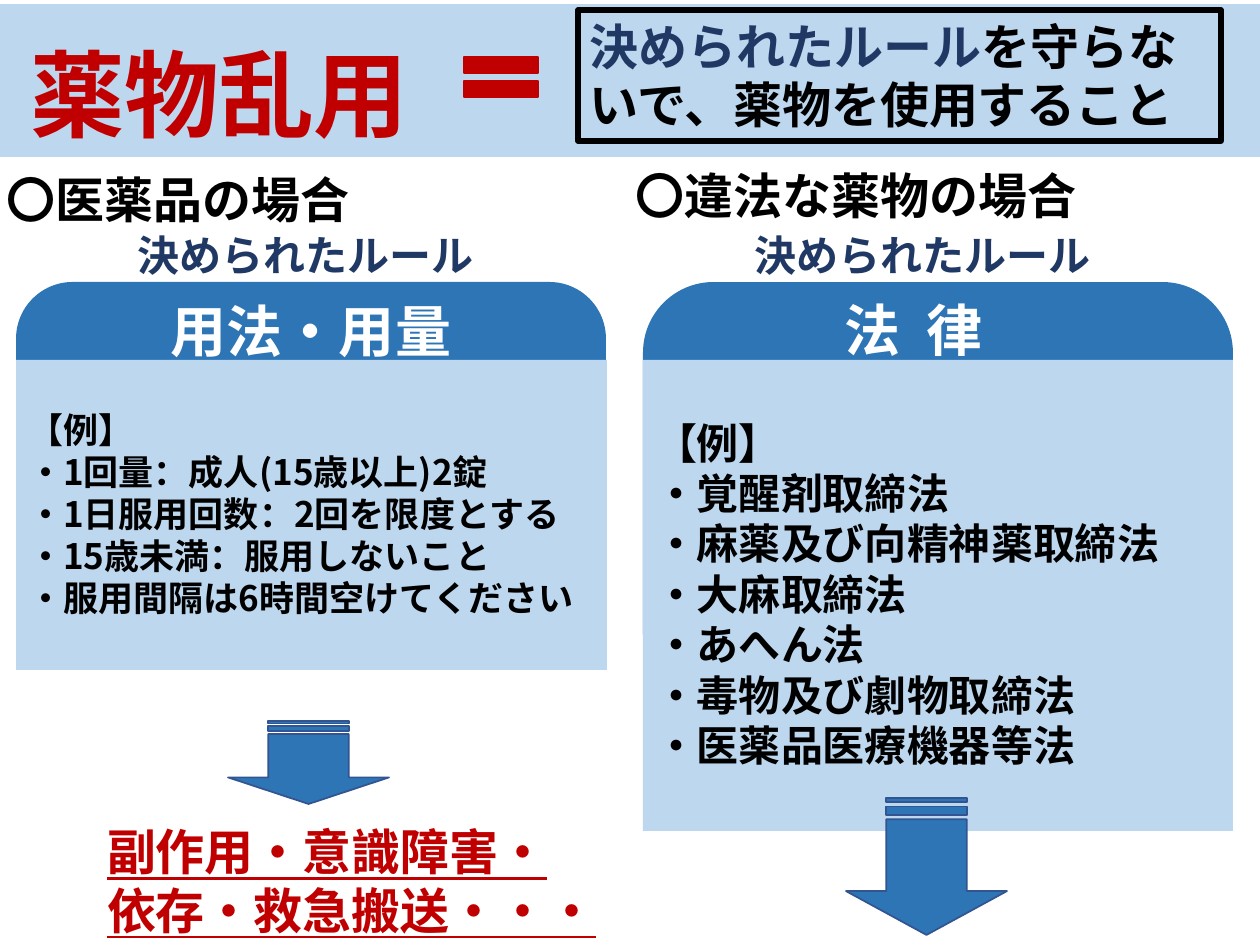
from dataclasses import dataclass

from lxml import etree
from pptx import Presentation
from pptx.dml.color import RGBColor
from pptx.enum.shapes import MSO_SHAPE
from pptx.enum.text import MSO_ANCHOR, MSO_AUTO_SIZE, PP_ALIGN
from pptx.oxml.ns import qn
from pptx.util import Emu, Pt

RECT = MSO_SHAPE.RECTANGLE
ROUND = MSO_SHAPE.ROUNDED_RECTANGLE
EQUAL = MSO_SHAPE.MATH_EQUAL
ARROW = MSO_SHAPE.STRIPED_RIGHT_ARROW
TOP, BOTTOM = MSO_ANCHOR.TOP, MSO_ANCHOR.BOTTOM
LEFT = PP_ALIGN.LEFT
NO_FIT = MSO_AUTO_SIZE.NONE
PX = 914400 // 126  # EMU per px
TWO_CONTENT = 3

Box = tuple[int, int, int, int]


@dataclass(frozen=True)
class Theme:
    font: str = "Noto Sans CJK JP"
    black: str = "000000"
    white: str = "FFFFFF"
    red: str = "C00000"
    navy: str = "203864"
    blue: str = "2E75B6"
    pale: str = "BDD7EE"
    edge: str = "325491"
    title: int = 54
    header: int = 32
    heading: int = 28
    label: int = 24


T = Theme()


@dataclass(frozen=True)
class Panel:
    heading: str
    heading_box: Box
    rule_box: Box
    card: Box
    header: str
    header_box: Box
    header_gap: int  # hundredths of a point between characters
    body_box: Box
    body_top: int
    body_size: int
    items: tuple[str, ...]
    arrow: Box


PANELS = (
    Panel("〇医薬品の場合", (-5, 163, 494, 72), (126, 224, 365, 63),
          (16, 282, 590, 340), "用法・用量", (159, 290, 306, 81), 0,
          (16, 360, 591, 310), 48, 20,
          ("【例】", "・1回量：成人(15歳以上)2錠", "・1日服用回数：2回を限度とする",
           "・15歳未満：服用しないこと", "・服用間隔は6時間空けてください"),
          (267, 682, 83, 161)),
    Panel("〇違法な薬物の場合", (624, 160, 494, 72), (743, 224, 365, 63),
          (643, 282, 590, 423), "法 律", (833, 289, 188, 81), 360,
          (643, 360, 590, 471), 57, 24,
          ("【例】", "・覚醒剤取締法", "・麻薬及び向精神薬取締法", "・大麻取締法",
           "・あへん法", "・毒物及び劇物取締法", "・医薬品医療機器等法"),
          (858, 786, 137, 161)),
)


def emu(box: Box) -> list[Emu]:
    return [Emu(v * PX) for v in box]


def place(sp, box: Box) -> None:
    sp.left, sp.top, sp.width, sp.height = emu(box)


def add_run(p, text: str, *, size: int, color: str = T.black,
            underline: bool = False, gap: int = 0) -> None:
    r = p.add_run()
    r.text = text
    f = r.font
    f.size, f.bold = Pt(size), True
    if underline:
        f.underline = True
    f.color.rgb = RGBColor.from_string(color)
    f.name = T.font
    rpr = r._r.get_or_add_rPr()
    etree.SubElement(rpr, qn("a:ea")).set("typeface", T.font)
    if gap:
        rpr.set("spc", str(gap))


def write(sp, *lines: str, anchor=TOP, left: int = 12, right: int = 12,
          top: int = 6, spacing: float = 1.0, **fmt) -> None:
    """Set one paragraph per line, all in the same format."""
    tf = sp.text_frame
    tf.word_wrap, tf.auto_size, tf.vertical_anchor = True, NO_FIT, anchor
    tf.margin_left, tf.margin_right, tf.margin_top, tf.margin_bottom = emu(
        (left, right, top, 6))
    for i, line in enumerate(lines):
        p = tf.add_paragraph() if i else tf.paragraphs[0]
        p.alignment, p.line_spacing = LEFT, spacing
        p.space_before = p.space_after = Pt(0)
        add_run(p, line, **fmt)


def add_text(slide, box: Box, *lines: str, **fmt) -> None:
    write(slide.shapes.add_textbox(*emu(box)), *lines, **fmt)


def paint(sp, color: str) -> None:
    sp.fill.solid()
    sp.fill.fore_color.rgb = RGBColor.from_string(color)


def add_shape(slide, kind, box: Box, *, fill: str = "", line: str = "",
              weight: int = 1, adj: tuple[float, ...] = (), turn: int = 0):
    sp = slide.shapes.add_shape(kind, *emu(box))
    sp.shadow.inherit = False
    sp.rotation = turn
    for i, value in enumerate(adj):
        sp.adjustments[i] = value
    if fill:
        paint(sp, fill)
    else:
        sp.fill.background()
    if line:
        sp.line.color.rgb = RGBColor.from_string(line)
        sp.line.width = Pt(weight)
    else:
        sp.line.fill.background()
    return sp


def fill_body(slide, sp, panel: Panel) -> None:
    slide.shapes._spTree.append(sp._element)  # bring in front of the card
    place(sp, panel.body_box)
    paint(sp, T.pale)
    write(sp, *panel.items, size=panel.body_size, top=panel.body_top, right=0)
    for p in sp.text_frame.paragraphs:
        ppr = p._p.get_or_add_pPr()
        ppr.set("marL", "0")
        ppr.set("indent", "0")
        etree.SubElement(ppr, qn("a:buNone"))


def draw_panel(slide, body, panel: Panel) -> None:
    add_text(slide, panel.heading_box, panel.heading, size=T.heading)
    add_text(slide, panel.rule_box, "決められたルール", size=T.label, color=T.navy)
    add_shape(slide, ROUND, panel.card, fill=T.blue)
    fill_body(slide, body, panel)
    add_text(slide, panel.header_box, panel.header, size=T.header,
             color=T.white, gap=panel.header_gap)
    add_shape(slide, ARROW, panel.arrow, fill=T.blue, line=T.edge,
              adj=(0.5, 0.32), turn=90)


def main() -> None:
    prs = Presentation()
    prs.slide_width, prs.slide_height = Emu(1260 * PX), Emu(945 * PX)
    slide = prs.slides.add_slide(prs.slide_layouts[TWO_CONTENT])
    title, *bodies = slide.placeholders

    # Title band
    place(title, (0, 4, 1260, 153))
    paint(title, T.pale)
    write(title, "薬物乱用", size=T.title, color=T.red, anchor=BOTTOM,
          left=30, spacing=0.9)

    # Definition
    add_shape(slide, EQUAL, (451, 44, 100, 66), fill=T.red, line=T.red,
              adj=(0.24, 0.12))
    sp = add_shape(slide, RECT, (578, 10, 643, 131), line=T.black, weight=3)
    write(sp, "決められたルール", size=T.heading, color=T.navy)
    add_run(sp.text_frame.paragraphs[0], "を守らないで、薬物を使用すること",
            size=T.heading)

    # Two cases side by side
    for body, panel in zip(bodies, PANELS):
        draw_panel(slide, body, panel)

    # Consequences
    add_text(slide, (95, 816, 590, 131), "副作用・意識障害・", "依存・救急搬送・・・",
             size=T.heading, color=T.red, underline=True)

    prs.save("out.pptx")


if __name__ == "__main__":
    main()
